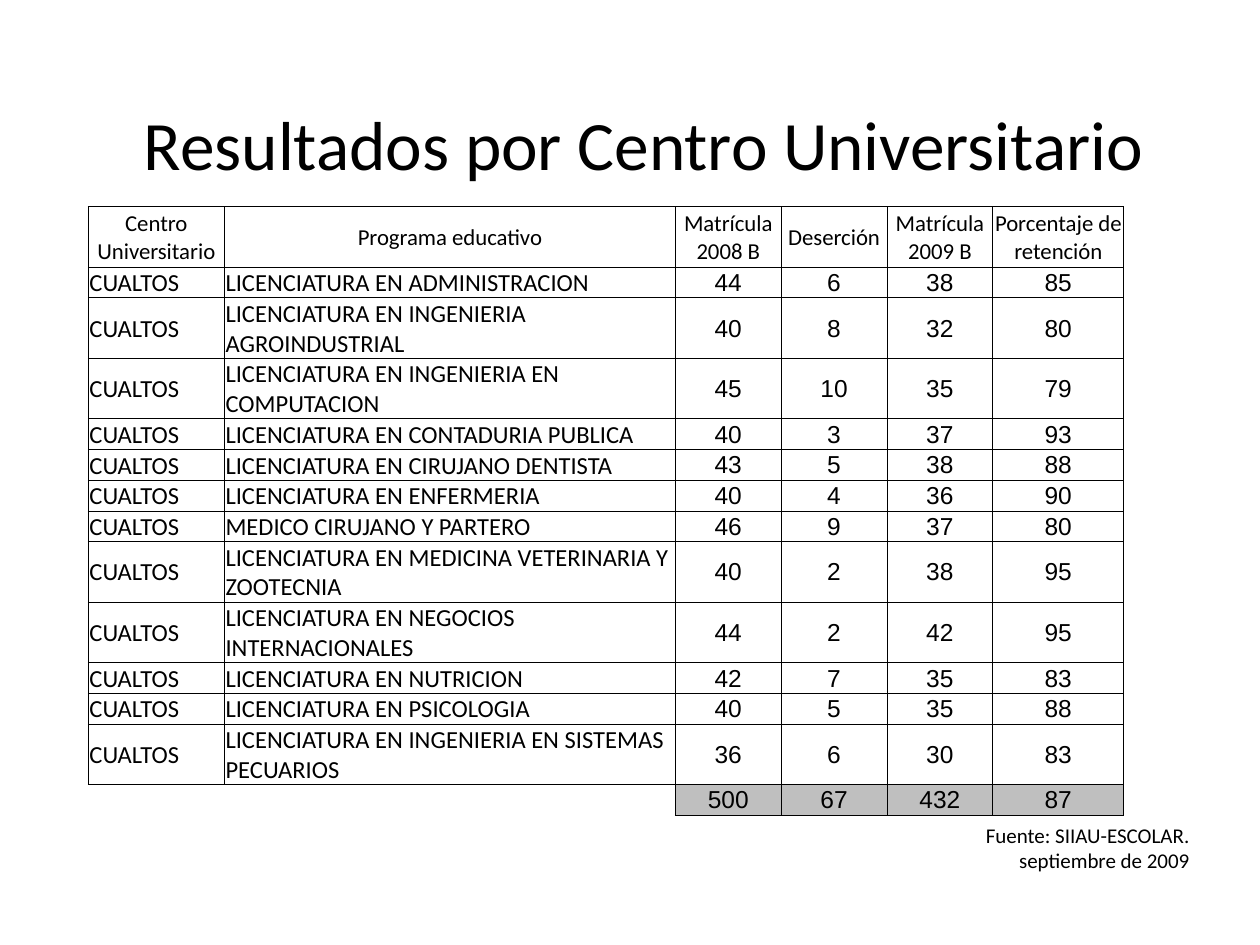
from typing import NamedTuple

from lxml.etree import SubElement
from pptx import Presentation
from pptx.dml.color import RGBColor
from pptx.enum.text import MSO_ANCHOR as Anchor, PP_ALIGN as Align
from pptx.oxml import parse_xml
from pptx.oxml.ns import nsdecls, qn
from pptx.util import Inches, Pt

BLACK = RGBColor(0x00, 0x00, 0x00)
WHITE = RGBColor(0xFF, 0xFF, 0xFF)
GRAY = RGBColor(0xBF, 0xBF, 0xBF)

WIDE, HIGH = Inches(10), Inches(7.5)
COL, ROW = WIDE / 100, HIGH / 100
LEFT, TOP = 7, 21.87
COLS = [10.8, 35.8, 8.4, 8.4, 8.4, 10.4]
LOW, TALL = 3.2, 6.4
WRAP = 34
INSET = {"margin_left": 0.01, "margin_right": 0.01, "margin_top": 0.01, "margin_bottom": 0}


class Style(NamedTuple):
    size: float
    face: str = "Calibri"
    align: Align = Align.LEFT


class Label(NamedTuple):
    x: float
    y: float
    w: float
    h: float
    lines: list[str]
    style: Style
    anchor: Anchor


class Course(NamedTuple):
    name: str
    start: int
    lost: int
    stay: int
    rate: int


HEAD = Style(13, align=Align.CENTER)
WORD = Style(14)
COUNT = Style(14, "Arial", Align.CENTER)

LABELS = [
    Label(8.6, 7.33, 85, 15.6, ["Resultados por Centro Universitario"],
          Style(39.6, align=Align.CENTER), Anchor.MIDDLE),
    Label(69.5, 86.4, 25.9, 6.67, ["Fuente: SIIAU-ESCOLAR.", "septiembre de 2009"],
          Style(12, align=Align.RIGHT), Anchor.TOP),
]
TITLES = ["Centro Universitario", "Programa educativo", "Matrícula 2008 B",
          "Deserción", "Matrícula 2009 B", "Porcentaje de retención"]
COURSES = [
    Course("LICENCIATURA EN ADMINISTRACION", 44, 6, 38, 85),
    Course("LICENCIATURA EN INGENIERIA AGROINDUSTRIAL", 40, 8, 32, 80),
    Course("LICENCIATURA EN INGENIERIA EN COMPUTACION", 45, 10, 35, 79),
    Course("LICENCIATURA EN CONTADURIA PUBLICA", 40, 3, 37, 93),
    Course("LICENCIATURA EN CIRUJANO DENTISTA", 43, 5, 38, 88),
    Course("LICENCIATURA EN ENFERMERIA", 40, 4, 36, 90),
    Course("MEDICO CIRUJANO Y PARTERO", 46, 9, 37, 80),
    Course("LICENCIATURA EN MEDICINA VETERINARIA Y ZOOTECNIA", 40, 2, 38, 95),
    Course("LICENCIATURA EN NEGOCIOS INTERNACIONALES", 44, 2, 42, 95),
    Course("LICENCIATURA EN NUTRICION", 42, 7, 35, 83),
    Course("LICENCIATURA EN PSICOLOGIA", 40, 5, 35, 88),
    Course("LICENCIATURA EN INGENIERIA EN SISTEMAS PECUARIOS", 36, 6, 30, 83),
]
TOTALS = ["", "", 500, 67, 432, 87]


def write(para, text: str, style: Style) -> None:
    para.alignment = style.align
    if not text:
        SubElement(para._p, qn("a:endParaRPr"), sz=str(style.size * 100))
        return
    run = para.add_run()
    run.text = text
    for key, value in {"size": Pt(style.size), "name": style.face}.items():
        setattr(run.font, key, value)
    run.font.color.rgb = BLACK


def add_label(slide, label: Label) -> None:
    box = slide.shapes.add_textbox(int(label.x * COL), int(label.y * ROW),
                                   int(label.w * COL), int(label.h * ROW))
    frame = box.text_frame
    frame.word_wrap = True
    frame.vertical_anchor = label.anchor
    for i, line in enumerate(label.lines):
        para = frame.add_paragraph() if i else frame.paragraphs[0]
        write(para, line, label.style)


def rule(cell, edges: str) -> None:
    props = cell._tc.get_or_add_tcPr()
    for i, side in enumerate("LRTB"):
        paint = (f'<a:solidFill><a:srgbClr val="{BLACK}"/></a:solidFill>'
                 if side in edges else "<a:noFill/>")
        props.insert(i, parse_xml(
            f'<a:ln{side} {nsdecls("a")} w="{Pt(0.5)}">{paint}</a:ln{side}>'))


def fill_cell(cell, text: str, style: Style, color: RGBColor, edges: str) -> None:
    for key, value in INSET.items():
        setattr(cell, key, Inches(value))
    cell.vertical_anchor = Anchor.MIDDLE
    cell.fill.solid()
    cell.fill.fore_color.rgb = color
    write(cell.text_frame.paragraphs[0], text, style)
    rule(cell, edges)


def add_grid(slide) -> None:
    data = [TITLES, *(["CUALTOS", *course] for course in COURSES), TOTALS]
    last = len(data) - 1
    highs = [TALL, *(TALL if len(c.name) > WRAP else LOW for c in COURSES), LOW]
    table = slide.shapes.add_table(
        len(data), len(COLS), int(LEFT * COL), int(TOP * ROW),
        int(sum(COLS) * COL), int(sum(highs) * ROW)).table
    for key in ("first_row", "horz_banding"):
        setattr(table, key, False)
    for col, wide in zip(table.columns, COLS):
        col.width = int(wide * COL)
    for r, (high, line) in enumerate(zip(highs, data)):
        table.rows[r].height = int(high * ROW)
        for c, value in enumerate(line):
            style = HEAD if r == 0 else WORD if c < 2 else COUNT
            blank = value == ""
            color = GRAY if r == last and not blank else WHITE
            edges = ("TR" if c else "T") if blank else "LRTB"
            fill_cell(table.cell(r, c), str(value), style, color, edges)


def main() -> None:
    deck = Presentation()
    deck.slide_width, deck.slide_height = WIDE, HIGH
    slide = deck.slides.add_slide(deck.slide_layouts[6])
    for label in LABELS:
        add_label(slide, label)
    add_grid(slide)
    deck.save("out.pptx")


if __name__ == "__main__":
    main()
